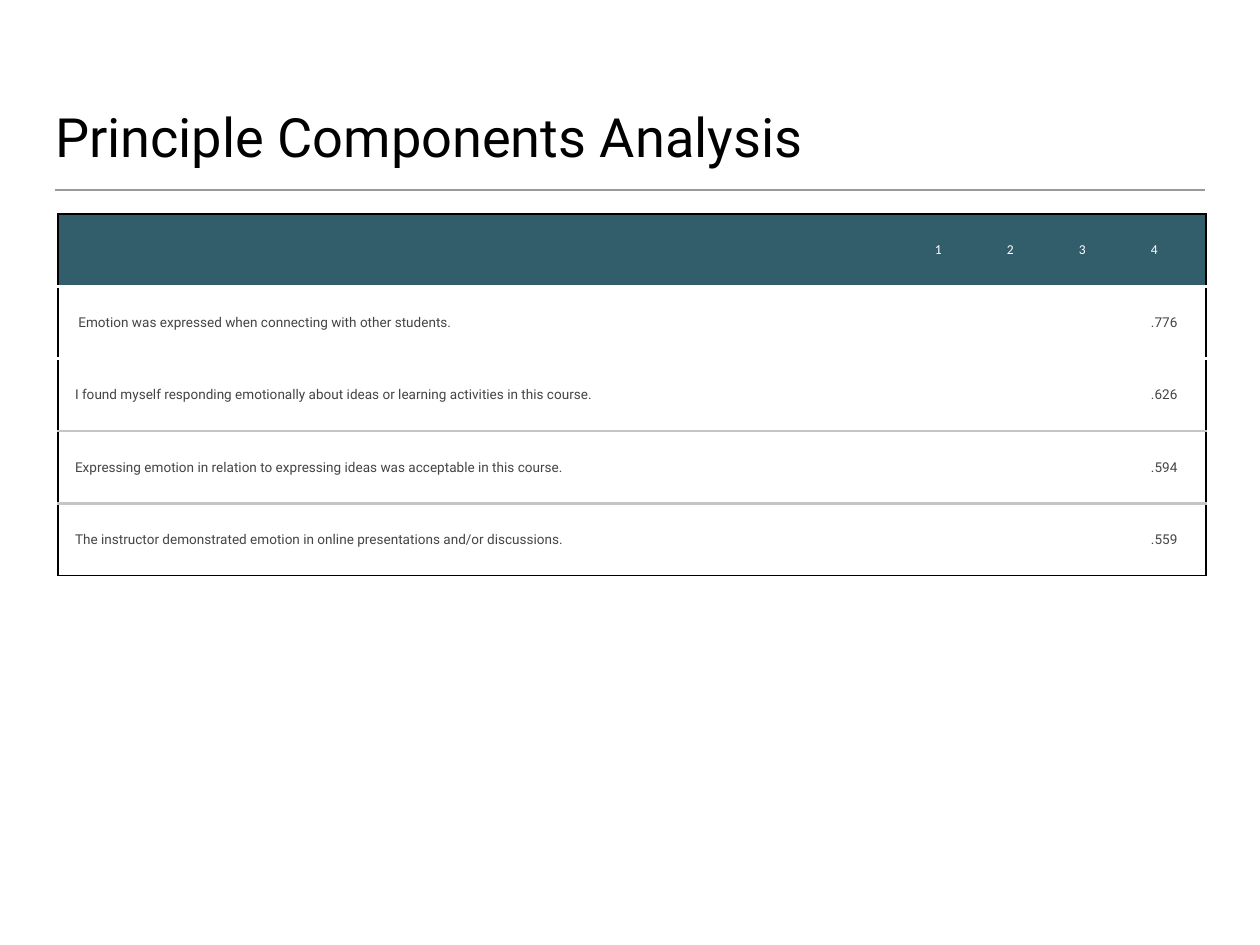
from lxml import etree
from pptx import Presentation
from pptx import util as u
from pptx.dml.color import RGBColor
from pptx.enum import shapes, text
from pptx.oxml import ns

PX = 10320
BLACK = RGBColor(0x00, 0x00, 0x00)
WHITE = RGBColor(0xFF, 0xFF, 0xFF)
TEAL = RGBColor(0x32, 0x5D, 0x6B)
BODY_GRAY = RGBColor(0x44, 0x44, 0x44)
RULE_GRAY = RGBColor(0x9A, 0x9A, 0x9A)
BORDER_GRAY = RGBColor(0xC4, 0xC6, 0xC6)

OUTER = (BLACK, 1)
WHITE_GAP = (WHITE, 3)
GRAY_LINE = (BORDER_GRAY, 2)
ROW_LINES = [OUTER, WHITE_GAP, WHITE_GAP, GRAY_LINE, GRAY_LINE, OUTER]

HEADINGS = ["", "1", "2", "3", "4"]
LOADINGS = [
    (" Emotion was expressed when connecting with other students.", ".776"),
    ("I found myself responding emotionally about ideas or learning activities in this course.", ".626"),
    ("Expressing emotion in relation to expressing ideas was acceptable in this course.", ".594"),
    ("The instructor demonstrated emotion in online presentations and/or discussions.", ".559"),
]


def px(length):
    """Turn a length in px into EMU."""
    return u.Emu(length * PX)


def write(frame, content, size=11, font="Roboto", color=BODY_GRAY, indent=0):
    """Put one formatted paragraph in a text frame."""
    paragraph = frame.paragraphs[0]
    if indent:
        properties = paragraph._p.get_or_add_pPr()
        properties.set("marL", str(px(indent)))
        properties.set("indent", "0")
    run = paragraph.add_run()
    run.text = content
    run.font.size = u.Pt(size)
    run.font.name = font
    run.font.color.rgb = color


def set_borders(cell, **edges):
    """Draw the L, R, T and B edges of a cell, each a colour and width or None."""
    properties = cell._tc.get_or_add_tcPr()
    for side, border in edges.items():
        line = etree.SubElement(properties, ns.qn(f"a:ln{side}"))
        if border is None:
            etree.SubElement(line, ns.qn("a:noFill"))
            continue
        color, width = border
        line.set("w", str(u.Pt(width)))
        fill = etree.SubElement(line, ns.qn("a:solidFill"))
        etree.SubElement(fill, ns.qn("a:srgbClr"), val=str(color))


def add_title(slide, left, top, width, height):
    """Place the title with a thin rule below it."""
    box = slide.shapes.add_textbox(px(left), px(top), px(width), px(height))
    frame = box.text_frame
    frame.word_wrap = True
    frame.vertical_anchor = text.MSO_ANCHOR.BOTTOM
    frame.margin_left = frame.margin_right = 0
    frame.margin_top = frame.margin_bottom = 0
    write(frame, "Principle Components Analysis", size=44, color=BLACK)

    rule_y = px(top + height + 22)
    rule = slide.shapes.add_connector(
        shapes.MSO_CONNECTOR.STRAIGHT, px(left), rule_y, px(left + width), rule_y)
    rule.line.color.rgb = RULE_GRAY
    rule.line.width = u.Pt(1)
    etree.SubElement(rule._element.spPr, ns.qn("a:effectLst"))


def add_loadings(slide, left, top, width, height):
    """Place the table of component loadings."""
    rows = [HEADINGS] + [[item, "", "", "", value] for item, value in LOADINGS]
    columns = len(HEADINGS)
    table = slide.shapes.add_table(
        len(rows), columns, px(left), px(top), px(width), px(height)).table
    table.first_row = table.horz_banding = False
    component_width = 72
    table.columns[0].width = px(width - component_width * (columns - 1))
    for column in range(1, columns):
        table.columns[column].width = px(component_width)

    for r, values in enumerate(rows):
        table.rows[r].height = px(height) // len(rows)
        for c, value in enumerate(values):
            cell = table.cell(r, c)
            cell.vertical_anchor = text.MSO_ANCHOR.MIDDLE
            cell.margin_left = cell.margin_right = px(5)
            cell.margin_top = cell.margin_bottom = px(5)
            set_borders(cell,
                        L=OUTER if c == 0 else None,
                        R=OUTER if c == columns - 1 else None,
                        T=ROW_LINES[r], B=ROW_LINES[r + 1])
            if r == 0:
                cell.fill.solid()
                cell.fill.fore_color.rgb = TEAL
                style = {"font": "Calibri", "color": WHITE}
            else:
                cell.fill.background()
                style = {}
            if value:
                write(cell.text_frame, value, indent=12, **style)


def main():
    """Build and save the slide."""
    presentation = Presentation()
    presentation.slide_width = px(1260)
    presentation.slide_height = px(945)
    slide = presentation.slides.add_slide(presentation.slide_layouts[6])
    add_title(slide, 55, 32, 1150, 136)
    add_loadings(slide, 58, 214, 1148, 362)
    presentation.save("out.pptx")


if __name__ == "__main__":
    main()
